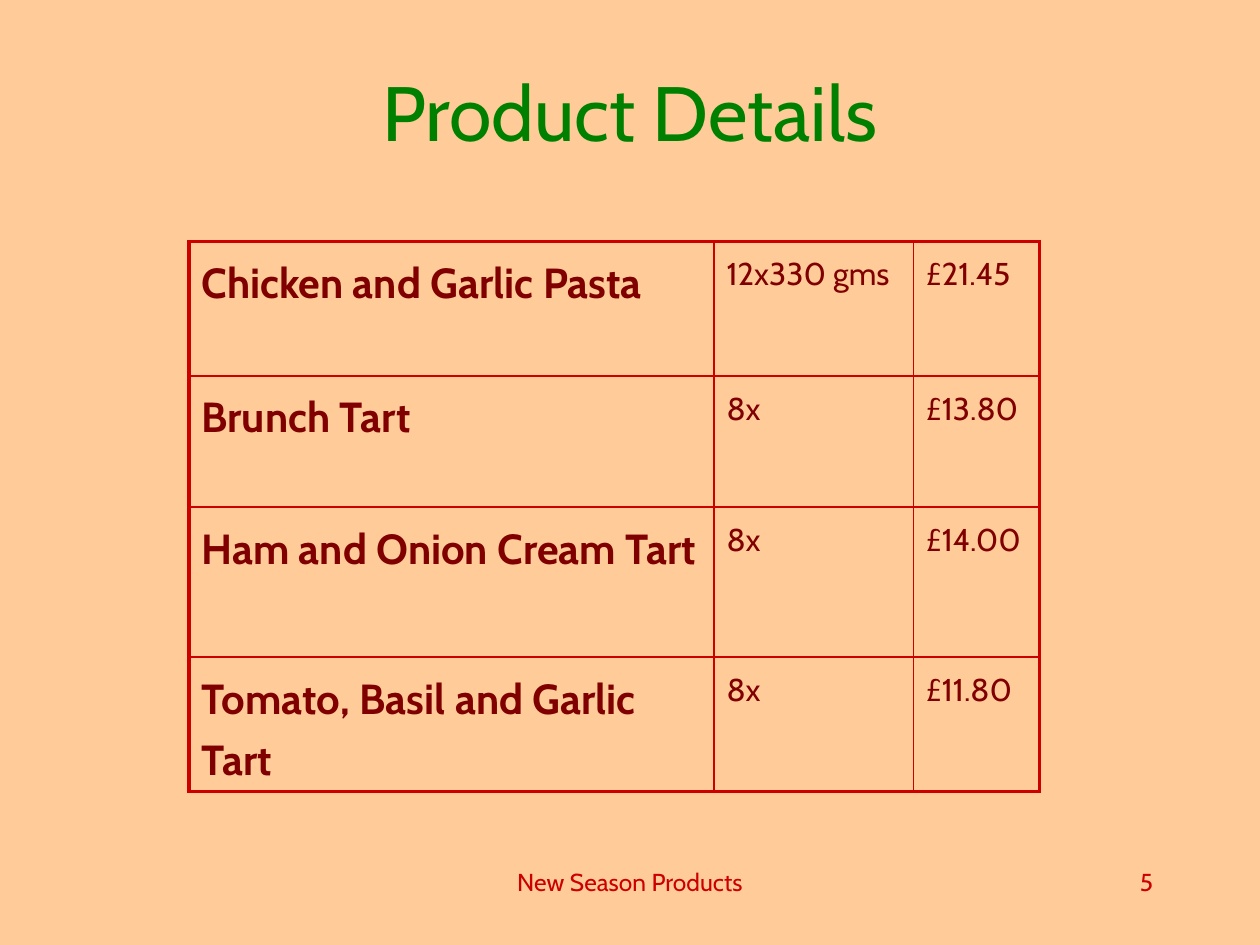
import pptx
import pptx.util
import pptx.dml.color
import pptx.enum.text
import pptx.oxml
import pptx.oxml.ns

THEME = {
    "font": "Cabin",
    "background": "FFCC99", "title": "008000", "table_text": "800000", "accent": "CC0000",
    "title_size": 44, "product_size": 24, "detail_size": 18, "footer_size": 14,
    "outer_line": 2.25, "inner_line": 1,
}
ALIGN = pptx.enum.text.PP_ALIGN
ANCHOR = pptx.enum.text.MSO_ANCHOR
RGB = pptx.dml.color.RGBColor.from_string

prs = pptx.Presentation()
prs.slide_width = pptx.util.Inches(10)
prs.slide_height = pptx.util.Inches(7.5)
unit = prs.slide_width / 120  # the slide is a grid of 120 columns by 90 rows

s = prs.slides.add_slide(prs.slide_layouts[6])
s.background.fill.solid()
s.background.fill.fore_color.rgb = RGB(THEME["background"])


def set_text(tf, text, size, color, align=ALIGN.LEFT, bold=False):
    tf.word_wrap = True
    tf.text = text
    p = tf.paragraphs[0]
    p.alignment = align
    r = p.runs[0]
    r.font.name = THEME["font"]
    r.font.size = pptx.util.Pt(THEME[size])
    r.font.bold = bold
    r.font.color.rgb = RGB(THEME[color])
    return p


def add_border(cell, side, width):
    """Draw one side (L, R, T or B) of a cell; call before setting its fill."""
    cell._tc.get_or_add_tcPr().append(pptx.oxml.parse_xml(
        f'<a:ln{side} {pptx.oxml.ns.nsdecls("a")} w="{pptx.util.Pt(width)}">'
        f'<a:solidFill><a:srgbClr val="{THEME["accent"]}"/></a:solidFill></a:ln{side}>'))


# Title and footer: column, row, width, height in grid units
for text, box, size, color, align, anchor in [
    ("New Season Products", (41, 82, 38, 6), "footer_size", "accent", ALIGN.CENTER, ANCHOR.TOP),
    ("5", (86, 82, 25, 6), "footer_size", "accent", ALIGN.RIGHT, ANCHOR.TOP),
    ("Product Details", (9, 3, 102, 15), "title_size", "title", ALIGN.CENTER, ANCHOR.MIDDLE),
]:
    tf = s.shapes.add_textbox(*[round(v * unit) for v in box]).text_frame
    tf.vertical_anchor = anchor
    set_text(tf, text, size, color, align)

# Product table
products = [
    ("Chicken and Garlic Pasta", "12x330 gms", "£21.45"),
    ("Brunch Tart", "8x", "£13.80"),
    ("Ham and Onion Cream Tart", "8x", "£14.00"),
    ("Tomato, Basil and Garlic Tart", "8x", "£11.80"),
]
col_widths = [50, 19, 12]
row_heights = [12.8, 12.5, 14.3, 12.8]
last_row, last_col = len(row_heights) - 1, len(col_widths) - 1

table = s.shapes.add_table(
    len(row_heights), len(col_widths), round(18 * unit), round(23 * unit),
    round(sum(col_widths) * unit), round(sum(row_heights) * unit)).table
table.first_row = table.horz_banding = False
for column, width in zip(table.columns, col_widths):
    column.width = round(width * unit)
for row, height in zip(table.rows, row_heights):
    row.height = round(height * unit)

for i, product in enumerate(products):
    for j, text in enumerate(product):
        cell = table.cell(i, j)
        is_name = j == 0
        p = set_text(cell.text_frame, text, "product_size" if is_name else "detail_size",
                     "table_text", bold=is_name)
        p.line_spacing = 1.2
        outer = {"L": j == 0, "R": j == last_col, "T": i == 0, "B": i == last_row}
        for side, is_outer in outer.items():
            add_border(cell, side, THEME["outer_line" if is_outer else "inner_line"])
        cell.fill.solid()
        cell.fill.fore_color.rgb = RGB(THEME["background"])

prs.save("out.pptx")
